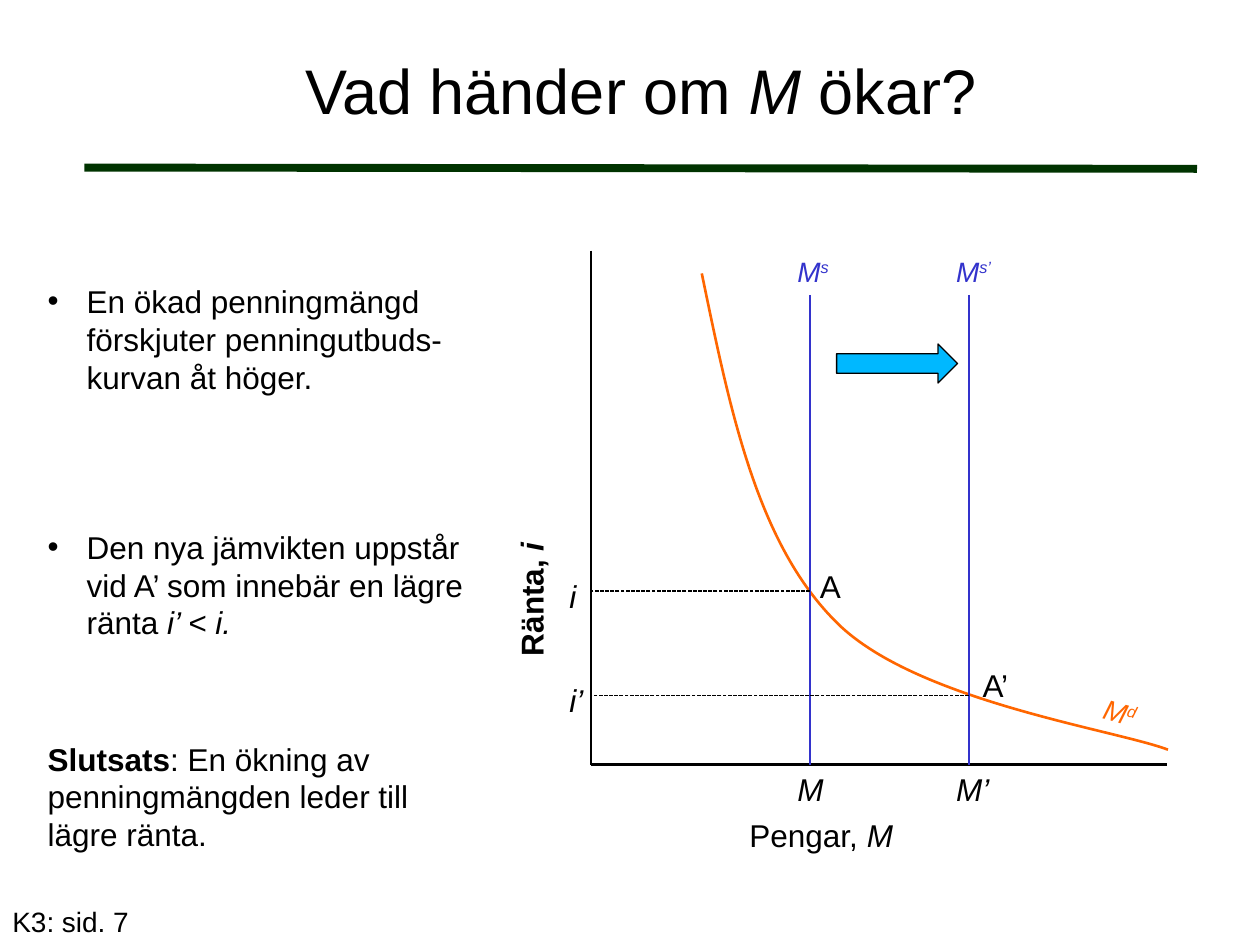
from lxml.etree import SubElement
from pptx import Presentation
from pptx.dml.color import RGBColor
from pptx.enum.dml import MSO_LINE
from pptx.enum.shapes import MSO_CONNECTOR, MSO_SHAPE
from pptx.enum.text import MSO_ANCHOR, PP_ALIGN
from pptx.oxml.ns import qn
from pptx.util import Inches, Pt

BLACK, BLUE, ORANGE = "000000", "3333CC", "FF6600"
GREEN, CYAN, WHITE = "003300", "00B8FF", "FFFFFF"

# Content: each run is (text, style), with b bold, i italic, ^ raised
TITLE = [("Vad händer om ", ""), ("M", "i"), (" ökar?", "")]
NOTES = [  # top, height, bullet, runs
    (2.19, 1.09, True,
     [("En ökad penningmängd förskjuter penningutbuds-kurvan åt höger.", "")]),
    (4.14, 1.09, True,
     [("Den nya jämvikten uppstår vid A’ som innebär en lägre ränta ", ""),
      ("i’ < i.", "i")]),
    (5.82, 0.98, False,
     [("Slutsats", "b"),
      (": En ökning av penningmängden leder till lägre ränta.", "")]),
]
FOOT = [("K3: sid. 7", "")]

# Diagram: axes, demand curve and the two equilibria
LEFT, TOP, RIGHT, BASE = 4.69, 1.99, 9.26, 6.07
CURVE = [(5.57, 2.17), (5.79, 3.23), (6, 4.29), (6.62, 4.92),
         (7.23, 5.56), (8.85, 5.79), (9.27, 5.95)]
POINTS = [  # x, y, supply mark, money, rate, point name, name place
    (6.43, 4.69, "s", "M", "i", "A", (6.41, 4.45)),
    (7.69, 5.52, "s’", "M’", "i’", "A’", (7.7, 5.24)),
]

deck = Presentation()
deck.slide_width, deck.slide_height = Inches(10), Inches(7.5)
slide = deck.slides.add_slide(deck.slide_layouts[6])
shapes = slide.shapes


def color(code):
    return RGBColor.from_string(code)


def text(runs, x, y, w, h, size=18, ink=BLACK, fill=None, turn=0,
         align=PP_ALIGN.LEFT, anchor=MSO_ANCHOR.TOP, bullet=False):
    box = shapes.add_textbox(Inches(x), Inches(y), Inches(w), Inches(h))
    box.rotation = turn
    if fill:
        box.fill.solid()
        box.fill.fore_color.rgb = color(fill)
    frame = box.text_frame
    frame.word_wrap, frame.vertical_anchor = True, anchor
    para = frame.paragraphs[0]
    para.alignment = align
    for words, style in runs:
        run = para.add_run()
        run.text = words
        font = run.font
        font.name, font.size = "Arial", Pt(size)
        font.color.rgb = color(ink)
        font.bold, font.italic = "b" in style, "i" in style
        if "^" in style:
            run._r.get_or_add_rPr().set("baseline", "30000")
    if bullet:
        props = para._p.get_or_add_pPr()
        props.set("marL", str(Inches(0.31)))
        props.set("indent", str(-Inches(0.31)))
        SubElement(props, qn("a:buFont")).set("typeface", "Arial")
        SubElement(props, qn("a:buChar")).set("char", "•")


def line(x1, y1, x2, y2, ink=BLACK, width=1.5, dash=None):
    rule = shapes.add_connector(MSO_CONNECTOR.STRAIGHT, Inches(x1), Inches(y1),
                                Inches(x2), Inches(y2))
    rule.line.color.rgb, rule.line.width = color(ink), Pt(width)
    if dash:
        rule.line.dash_style = dash
    SubElement(rule._element.spPr, qn("a:effectLst"))


def curve(points, ink):
    start, *rest = [(Inches(x), Inches(y)) for x, y in points]
    build = shapes.build_freeform(*start)
    build.add_line_segments(rest, close=False)
    shape = build.convert_to_shape()
    shape.shadow.inherit = False
    shape.fill.background()
    shape.line.color.rgb, shape.line.width = color(ink), Pt(1.5)
    # Every three straight steps become one Bézier segment
    track = next(shape._element.iter(qn("a:path")))
    steps = track.findall(qn("a:lnTo"))
    for n in range(0, len(steps), 3):
        bend = SubElement(track, qn("a:cubicBezTo"))
        for step in steps[n:n + 3]:
            bend.append(step[0])
            track.remove(step)


# Title and rule
text(TITLE, 0.67, 0.08, 8.83, 1.25, size=36, align=PP_ALIGN.CENTER,
     anchor=MSO_ANCHOR.MIDDLE)
line(0.67, 1.33, 9.5, 1.34, GREEN, 4.5)

# Notes on the left
for y, h, dot, runs in NOTES:
    text(runs, 0.28, y, 3.67, h, bullet=dot)

# Axes and their names
text([("Ränta, ", "b"), ("i", "bi")], 3.29, 4.18, 1.85, 0.4, fill=WHITE, turn=270)
text([("Pengar, ", ""), ("M", "i")], 5.85, 6.43, 2.77, 0.41, fill=WHITE)
line(LEFT, TOP, LEFT, BASE)
line(RIGHT, BASE, LEFT, BASE)

# Demand curve
text([("M", "i"), ("d", "i^")], 8.65, 5.56, 1.12, 0.37, size=16, ink=ORANGE,
     fill=WHITE, turn=15.6)
curve(CURVE, ORANGE)

# Supply lines, equilibria and guides
for x, y, mark, money, rate, name, place in POINTS:
    text([("M", "i"), (mark, "i^")], x - 0.2, 1.97, 2.15, 0.37, size=16,
         ink=BLUE, fill=WHITE)
    line(x, 2.34, x, BASE, BLUE)
    line(x, y, LEFT, y, width=0.75, dash=MSO_LINE.SQUARE_DOT)
    text([(money, "i")], x - 0.2, 6.06, 0.6, 0.4)
    text([(rate, "i")], 4.42, y - 0.16, 0.5, 0.4)
    text([(name, "")], *place, 0.6, 0.4)

# Shift arrow
arrow = shapes.add_shape(MSO_SHAPE.RIGHT_ARROW, Inches(6.64), Inches(2.73),
                         Inches(0.96), Inches(0.31))
arrow.shadow.inherit = False
arrow.fill.solid()
arrow.fill.fore_color.rgb = color(CYAN)
arrow.line.color.rgb, arrow.line.width = color(BLACK), Pt(0.75)

# Page reference
text(FOOT, 0, 7.13, 2.08, 0.37, size=16)

deck.save("out.pptx")
